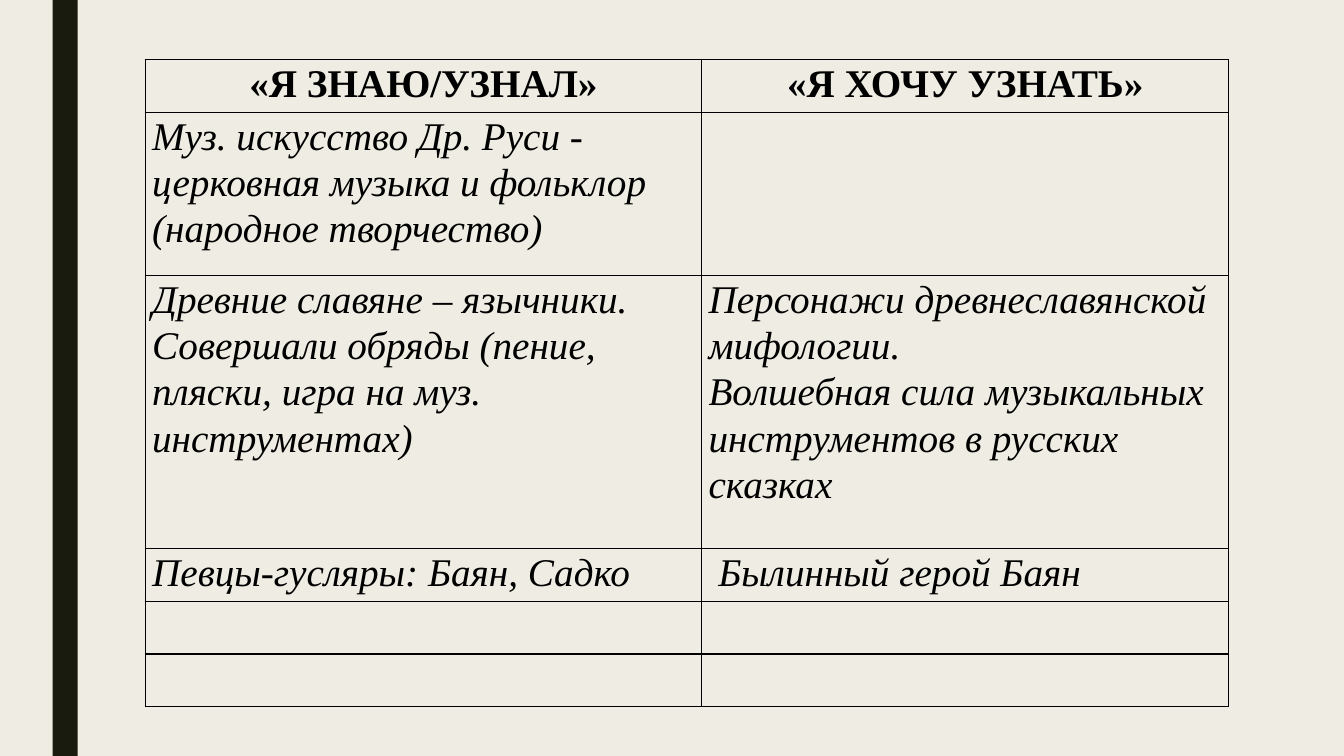
import pptx
import pptx.dml.color
import pptx.enum.shapes
import pptx.enum.text
import pptx.util
from dataclasses import dataclass
from lxml import etree

Pt = pptx.util.Pt


@dataclass
class Theme:
    back: str = "EFEDE3"
    bar: str = "191B0E"
    ink: str = "000000"
    font: str = "Times New Roman"
    size: int = 28
    rule: int = 1


theme = Theme()
Color = pptx.dml.color.RGBColor.from_string
Align = pptx.enum.text.PP_ALIGN


def edge(cell):
    """Draw a thin solid line on all four sides of a cell."""
    props = cell._tc.get_or_add_tcPr()
    space = props.nsmap["a"]
    for spot, side in enumerate(("lnL", "lnR", "lnT", "lnB")):
        line = etree.Element(f"{{{space}}}{side}", w=str(Pt(theme.rule)))
        fill = etree.SubElement(line, f"{{{space}}}solidFill")
        etree.SubElement(fill, f"{{{space}}}srgbClr", val=theme.ink)
        props.insert(spot, line)


deck = pptx.Presentation()
deck.slide_width, deck.slide_height = Pt(960), Pt(540)
slide = deck.slides.add_slide(deck.slide_layouts[6])
slide.background.fill.solid()
slide.background.fill.fore_color.rgb = Color(theme.back)

bar = slide.shapes.add_shape(
    pptx.enum.shapes.MSO_SHAPE.RECTANGLE, Pt(37.5), 0, Pt(18), Pt(540))
bar.shadow.inherit = False
bar.fill.solid()
bar.fill.fore_color.rgb = Color(theme.bar)
bar.line.fill.background()

texts = [
    ("«Я ЗНАЮ/УЗНАЛ»", "«Я ХОЧУ УЗНАТЬ»"),
    ("Муз. искусство Др. Руси - церковная музыка и фольклор "
     "(народное творчество)", ""),
    ("Древние славяне – язычники. Совершали обряды (пение, пляски, "
     "игра на муз. инструментах)",
     "Персонажи древнеславянской мифологии.\n"
     "Волшебная сила музыкальных инструментов в русских сказках"),
    ("Певцы-гусляры: Баян, Садко", " Былинный герой Баян"),
    ("", ""),
    ("", ""),
]
wide = [397.5, 376.5]
high = [37.6, 116.5, 195.5, 37.6, 37.6, 37.6]

table = slide.shapes.add_table(
    len(high), len(wide), Pt(103.7), Pt(42.5),
    Pt(sum(wide)), Pt(sum(high))).table
table.horz_banding = False
for col, width in zip(table.columns, wide):
    col.width = Pt(width)

for r, (row, height) in enumerate(zip(table.rows, high)):
    row.height = Pt(height)
    for cell, text in zip(row.cells, texts[r]):
        cell.margin_left = cell.margin_right = Pt(5)
        cell.margin_top = cell.margin_bottom = 0
        cell.fill.background()
        edge(cell)
        if not text:
            continue
        cell.text = text
        for para in cell.text_frame.paragraphs:
            para.alignment = Align.LEFT if r else Align.CENTER
            para.line_spacing = 1.07
            font = para.font
            font.name, font.size = theme.font, Pt(theme.size)
            font.bold, font.italic = r == 0, r > 0
            font.color.rgb = Color(theme.ink)

deck.save("out.pptx")
